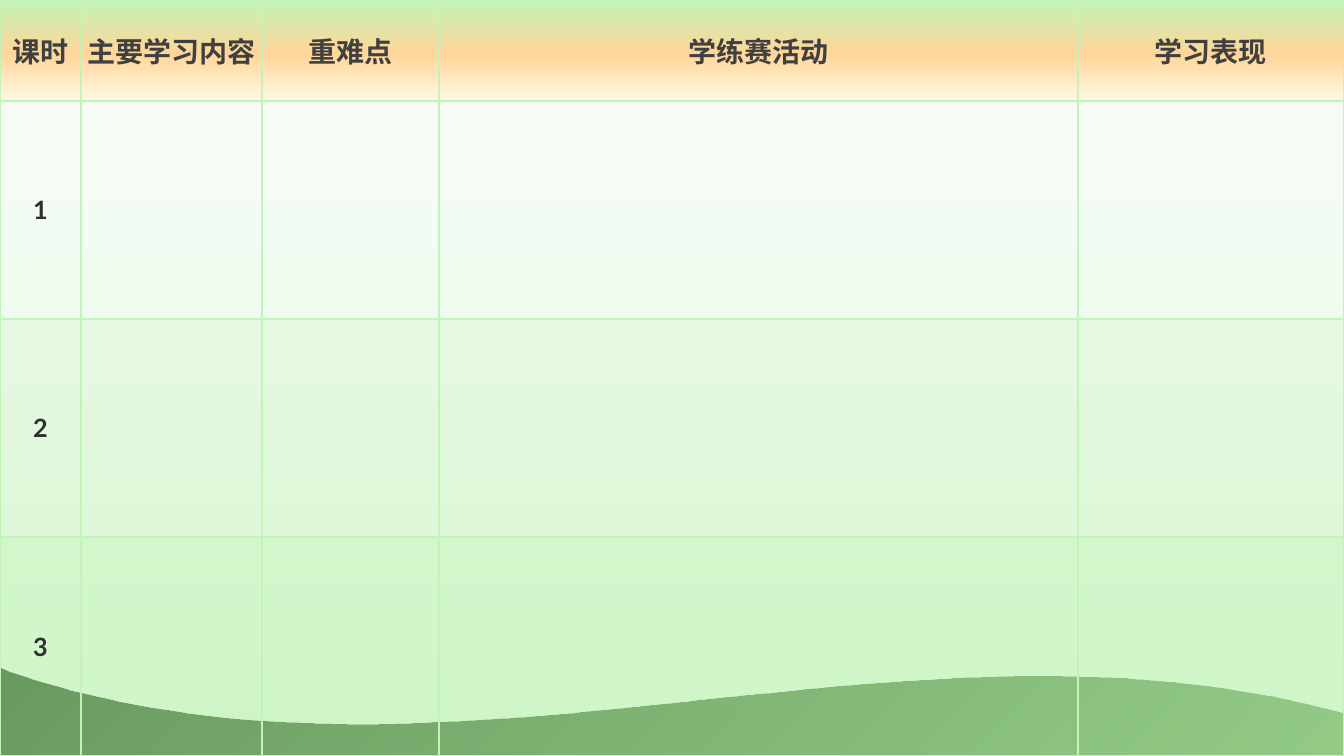
import pptx
import pptx.util
import pptx.dml.color
import pptx.enum.shapes
import pptx.enum.text
import pptx.oxml
import pptx.oxml.ns

COLORS = {
    "white": "FFFFFF", "mist": "F9FEF8", "mint": "E0F9DB", "leaf": "C1F4B6",
    "forest": "133F0A", "grass": "237312", "orange": "FFD699", "cream": "FEF8E2",
    "heading": "404040", "number": "2F2F2F",
}
WIDTH, HEIGHT = 1344, 756
SCALE = 12192000 / WIDTH
COLUMN_WIDTHS = [81, 181, 177, 639, 266]
ROW_HEIGHTS = [101, 218, 218, 219]
HEADINGS = ["课时", "主要学习内容", "重难点", "学练赛活动", "学习表现"]
LESSON_OPACITY = [0, 25, 50]
HEADER_STOPS = [(0, "leaf", 100), (53, "orange", 100), (100, "cream", 100)]
WAVE_CURVE = [(9, 672), (433, 814), (877, 607), (1303, 703)]


def px(value):
    return pptx.util.Emu(round(value * SCALE))


def xml(tag, content):
    return pptx.oxml.parse_xml(f"<a:{tag} {pptx.oxml.ns.nsdecls('a')}>{content}</a:{tag.split()[0]}>")


def color_xml(name, opacity=100):
    return f'<a:srgbClr val="{COLORS[name]}"><a:alpha val="{opacity * 1000}"/></a:srgbClr>'


def bezier(points, steps=80):
    """Sample a cubic curve given by its four control points."""
    for step in range(steps + 1):
        t = step / steps
        weights = [(1 - t) ** 3, 3 * t * (1 - t) ** 2, 3 * t ** 2 * (1 - t), t ** 3]
        yield tuple(sum(w * p[axis] for w, p in zip(weights, points)) for axis in (0, 1))


class LessonSlide:
    def __init__(self, presentation):
        self.font = "Lato"
        self.slide = presentation.slides.add_slide(presentation.slide_layouts[6])

    def gradient(self, fill, owner, stops, angle=90):
        """Fill with (position, colour, opacity) stops; angle runs clockwise."""
        fill.gradient()
        fill.gradient_angle = 360 - angle
        stop_list = next(owner.iter(pptx.oxml.ns.qn("a:gsLst")))
        for stop in list(stop_list):
            stop_list.remove(stop)
        for position, name, opacity in stops:
            stop_list.append(xml(f'gs pos="{position * 1000}"', color_xml(name, opacity)))

    def background(self, stops):
        self.gradient(self.slide.background.fill, self.slide.element, stops)

    def finish(self, shape, stops, angle):
        shape.shadow.inherit = False
        shape.line.fill.background()
        self.gradient(shape.fill, shape.element, stops, angle)

    def rectangle(self, left, top, width, height, stops, angle=90):
        shape = self.slide.shapes.add_shape(
            pptx.enum.shapes.MSO_SHAPE.RECTANGLE, px(left), px(top), px(width), px(height))
        self.finish(shape, stops, angle)

    def outline(self, points, stops, angle):
        start, *others = [(px(x), px(y)) for x, y in points]
        builder = self.slide.shapes.build_freeform(*start)
        builder.add_line_segments(others, close=True)
        self.finish(builder.convert_to_shape(), stops, angle)

    def table(self, column_widths, row_heights):
        table = self.slide.shapes.add_table(
            len(row_heights), len(column_widths), 0, 0,
            px(sum(column_widths)), px(sum(row_heights))).table
        table.first_row = table.horz_banding = False
        for column, width in zip(table.columns, column_widths):
            column.width = px(width)
        for row, height in zip(table.rows, row_heights):
            row.height = px(height)
        return table

    def borders(self, cell):
        properties = cell._tc.get_or_add_tcPr()
        for index, side in enumerate("LRTB"):
            properties.insert(index, xml(
                f'ln{side} w="12700"', f'<a:solidFill>{color_xml("leaf")}</a:solidFill>'))

    def tint(self, cell, name, opacity):
        if not opacity:
            cell.fill.background()
            return
        cell.fill.solid()
        cell.fill.fore_color.rgb = pptx.dml.color.RGBColor.from_string(COLORS[name])
        color = next(cell._tc.tcPr.find(pptx.oxml.ns.qn("a:solidFill")).iterchildren())
        color.append(xml(f'alpha val="{opacity * 1000}"', ""))

    def cell_text(self, cell, text, size, color, inset):
        cell.margin_left = cell.margin_right = cell.margin_top = cell.margin_bottom = px(inset)
        cell.vertical_anchor = pptx.enum.text.MSO_ANCHOR.MIDDLE
        paragraph = cell.text_frame.paragraphs[0]
        paragraph.alignment = pptx.enum.text.PP_ALIGN.CENTER
        run = paragraph.add_run()
        run.text = text
        run.font.name = self.font
        run.font.size = pptx.util.Pt(size)
        run.font.bold = True
        run.font.color.rgb = pptx.dml.color.RGBColor.from_string(COLORS[color])


def main():
    presentation = pptx.Presentation()
    presentation.slide_width, presentation.slide_height = px(WIDTH), px(HEIGHT)
    page = LessonSlide(presentation)
    page.background([(48, "white", 100), (100, "mint", 100)])
    page.rectangle(0, 0, WIDTH, HEIGHT, [(0, "mist", 80), (100, "mint", 78)])
    wave = [(0, 668), *bezier(WAVE_CURVE), (WIDTH, 713), (WIDTH, HEIGHT), (0, HEIGHT)]
    page.outline(wave, [(0, "forest", 100), (100, "grass", 65)], 45)

    table = page.table(COLUMN_WIDTHS, ROW_HEIGHTS)
    for column, heading in enumerate(HEADINGS):
        cell = table.cell(0, column)
        page.gradient(cell.fill, cell._tc, HEADER_STOPS)
        page.cell_text(cell, heading, 20, "heading", 4)
    for lesson, opacity in enumerate(LESSON_OPACITY, start=1):
        for column in range(len(HEADINGS)):
            page.tint(table.cell(lesson, column), "leaf", opacity)
        page.cell_text(table.cell(lesson, 0), str(lesson), 18, "number", 10)
    for cell in table.iter_cells():
        page.borders(cell)
    presentation.save("out.pptx")


if __name__ == "__main__":
    main()
